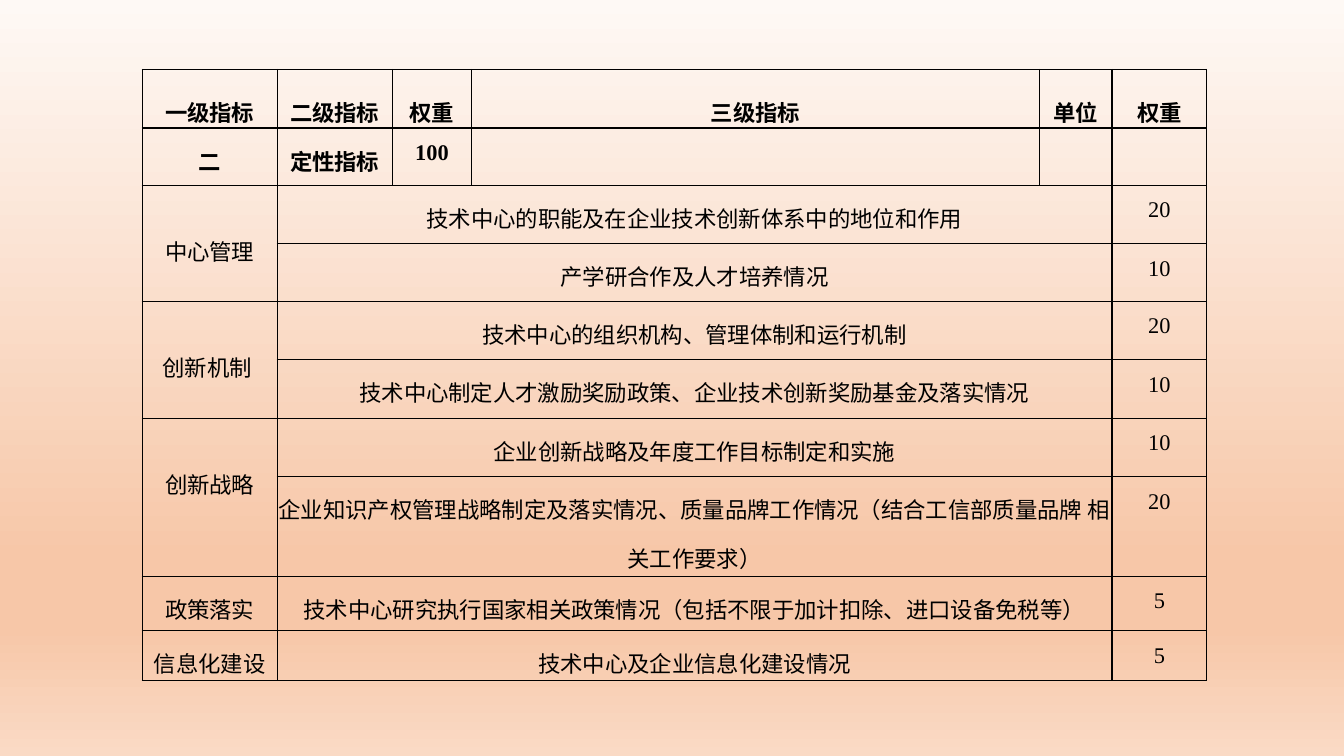
from lxml import etree
from pptx import Presentation
from pptx.dml.color import RGBColor
from pptx.enum import text
from pptx.oxml import ns
from pptx.util import Inches, Pt

COLORS = {"ink": "000000", "cream": "FEF9F5", "peach": "F7C7A8", "sand": "FADAC5"}
GRADIENT = [(0, "cream"), (74, "peach"), (83, "peach"), (100, "sand")]
CHINESE, DIGITS = "Noto Sans CJK SC", "Times New Roman"

HEADINGS = ["一级指标", "二级指标", "权重", "三级指标", "单位", "权重"]
SECTION = ["二", "定性指标", "100"]
GROUPS = [
    ("中心管理", [
        ("技术中心的职能及在企业技术创新体系中的地位和作用", "20"),
        ("产学研合作及人才培养情况", "10")]),
    ("创新机制 ", [
        ("技术中心的组织机构、管理体制和运行机制", "20"),
        ("技术中心制定人才激励奖励政策、企业技术创新奖励基金及落实情况", "10")]),
    ("创新战略", [
        ("企业创新战略及年度工作目标制定和实施", "10"),
        ("企业知识产权管理战略制定及落实情况、质量品牌工作情况（结合工信部质量品牌 相关工作要求）", "20")]),
    ("政策落实", [
        ("技术中心研究执行国家相关政策情况（包括不限于加计扣除、进口设备免税等）", "5")]),
    ("信息化建设", [("技术中心及企业信息化建设情况", "5")]),
]
COLUMN_WIDTHS = [1.34, 1.14, 0.79, 5.63, 0.72, 0.94]
ROW_HEIGHTS = [0.58, 0.57, 0.58, 0.57, 0.58, 0.58, 0.58, 0.99, 0.54, 0.49]
LEFT, TOP = 1.41, 0.69
GROUP_LABEL_DROP = 0.33


def paint_background(slide):
    fill = slide.background.fill
    fill.gradient()
    fill.gradient_angle = 270
    stops = fill.gradient_stops
    stop_list = slide._element.find(".//" + ns.qn("a:gsLst"))
    for stop in list(stop_list):
        stop_list.remove(stop)
    for percent, color in GRADIENT:
        stop = etree.SubElement(stop_list, ns.qn("a:gs"), pos=str(percent * 1000))
        etree.SubElement(stop, ns.qn("a:srgbClr"), val=COLORS[color])


def frame_cell(cell):
    """Give a cell black borders, no fill and no margins."""
    properties = cell._tc.get_or_add_tcPr()
    for side in ("lnL", "lnR", "lnT", "lnB"):
        line = etree.SubElement(properties, ns.qn("a:" + side), w=str(Pt(1)))
        solid = etree.SubElement(line, ns.qn("a:solidFill"))
        etree.SubElement(solid, ns.qn("a:srgbClr"), val=COLORS["ink"])
    cell.fill.background()
    cell.margin_left = cell.margin_right = cell.margin_top = cell.margin_bottom = 0


def write(cell, words, bold=False, spacing=1.5, drop=0):
    cell.margin_top = Inches(drop)
    paragraph = cell.text_frame.paragraphs[0]
    paragraph.alignment = text.PP_ALIGN.CENTER
    paragraph.line_spacing = spacing
    run = paragraph.add_run()
    run.text = words
    font = run.font
    font.size, font.bold = Pt(16), bold
    font.color.rgb = RGBColor.from_string(COLORS["ink"])
    font.name = DIGITS if words.isdecimal() else CHINESE
    etree.SubElement(run._r.get_or_add_rPr(), ns.qn("a:ea"), typeface=font.name)


def add_indicator_table(slide):
    frame = slide.shapes.add_table(
        len(ROW_HEIGHTS), len(COLUMN_WIDTHS), Inches(LEFT), Inches(TOP),
        Inches(sum(COLUMN_WIDTHS)), Inches(sum(ROW_HEIGHTS)))
    table = frame.table
    table.first_row = table.horz_banding = False
    for column, width in zip(table.columns, COLUMN_WIDTHS):
        column.width = Inches(width)
    for row, height in zip(table.rows, ROW_HEIGHTS):
        row.height = Inches(height)
    for cell in table.iter_cells():
        frame_cell(cell)

    for column, words in enumerate(HEADINGS):
        write(table.cell(0, column), words, bold=True, spacing=1.8)
    for column, words in enumerate(SECTION):
        write(table.cell(1, column), words, bold=True)

    row = 2
    for label, indicators in GROUPS:
        label_cell = table.cell(row, 0)
        shared = len(indicators) > 1
        if shared:
            label_cell.merge(table.cell(row + len(indicators) - 1, 0))
        write(label_cell, label, drop=GROUP_LABEL_DROP if shared else 0)
        for indicator, weight in indicators:
            table.cell(row, 1).merge(table.cell(row, 4))
            write(table.cell(row, 1), indicator)
            write(table.cell(row, 5), weight)
            row += 1


def main():
    presentation = Presentation()
    presentation.slide_width, presentation.slide_height = Inches(13.33), Inches(7.5)
    slide = presentation.slides.add_slide(presentation.slide_layouts[6])
    paint_background(slide)
    add_indicator_table(slide)
    presentation.save("out.pptx")


if __name__ == "__main__":
    main()
